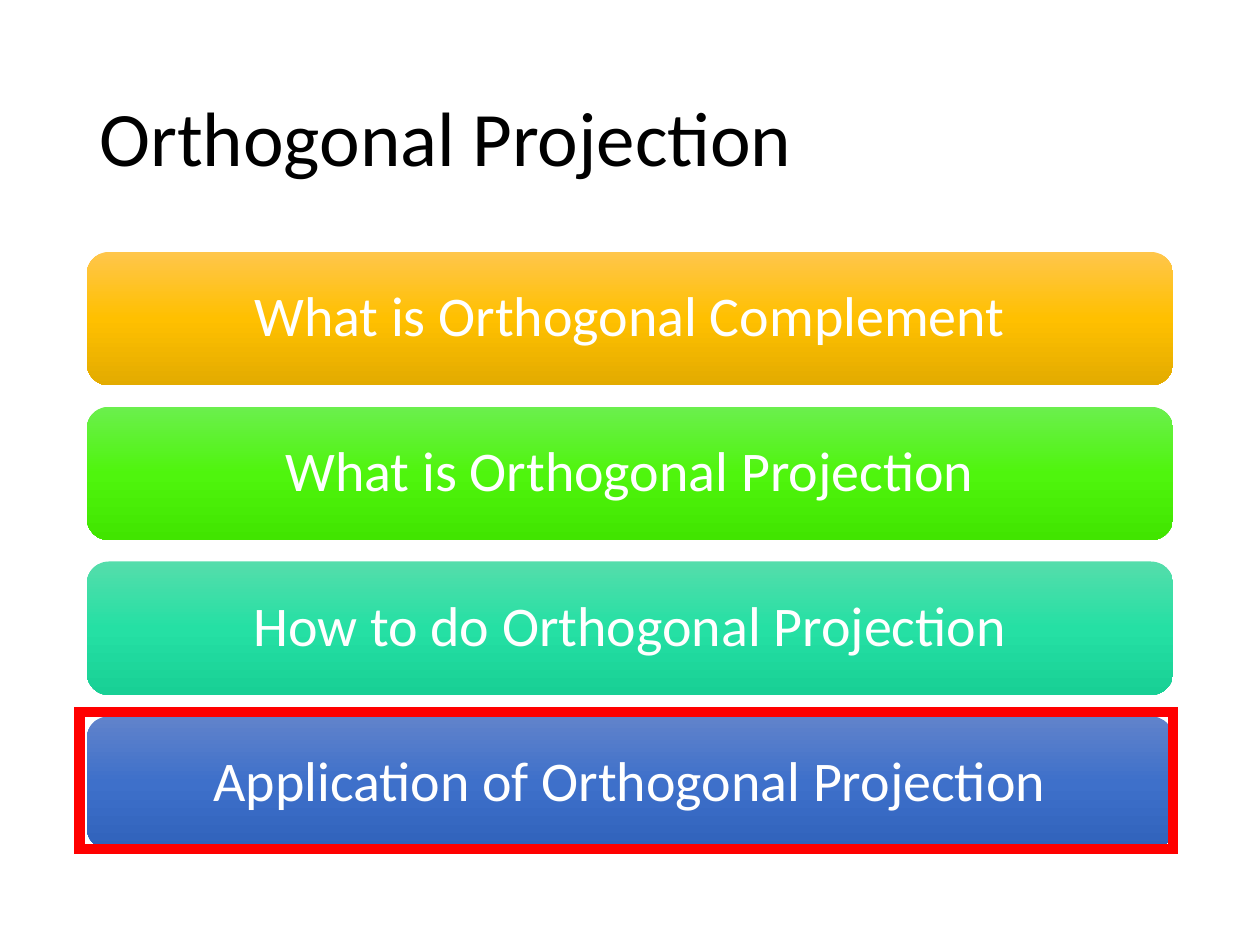
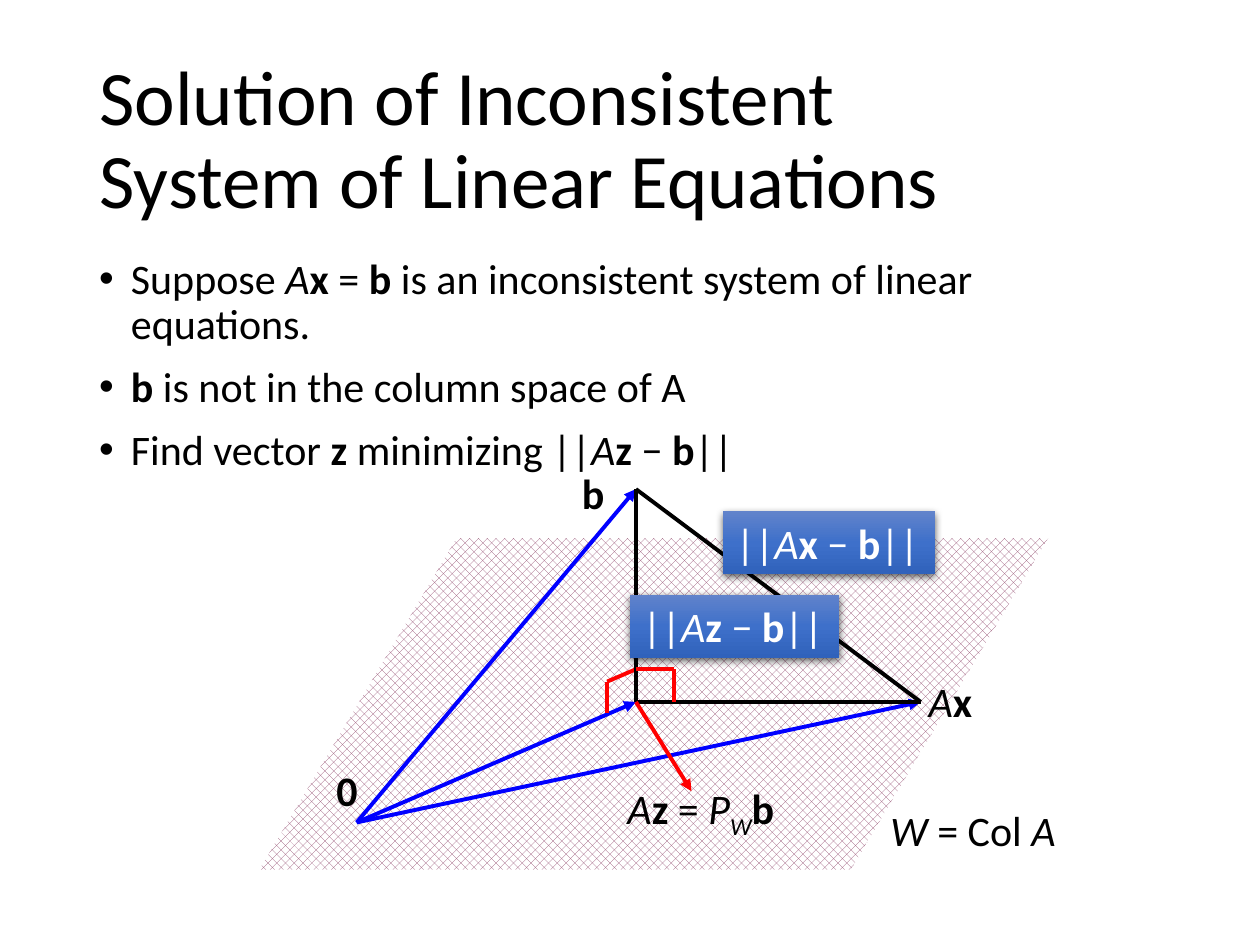
"""Build two slides on orthogonal projection and its use for inconsistent linear systems."""
from copy import deepcopy
from dataclasses import dataclass
from typing import NamedTuple, Optional

from lxml.etree import SubElement
from pptx import Presentation
from pptx.dml.color import RGBColor as Rgb
from pptx.enum.dml import MSO_PATTERN as Pattern
from pptx.enum.shapes import MSO_CONNECTOR as Connector, MSO_SHAPE as Preset
from pptx.enum.text import MSO_ANCHOR as Anchor, MSO_AUTO_SIZE as AutoSize, PP_ALIGN as Align
from pptx.oxml.ns import qn
from pptx.shapes.autoshape import Shape
from pptx.slide import Slide
from pptx.text.text import TextFrame
from pptx.util import Cm, Pt


@dataclass(frozen=True)
class Theme:
    font: str = "Calibri"
    title_size: int = 44
    bar_size: int = 32
    text_size: int = 24
    line_width: float = 2.25
    frame_width: float = 6
    tight_spacing: float = 0.9
    black: str = "000000"
    white: str = "FFFFFF"
    red: str = "FF0000"
    blue: str = "0000FF"
    plum: str = "954F72"
    gold_blend: tuple[str, ...] = ("FFC64B", "FFC000", "E3AB00")
    green_blend: tuple[str, ...] = ("6BEF4D", "4FF50D", "41E500")
    teal_blend: tuple[str, ...] = ("55DDAB", "25E0A4", "18D095")
    blue_blend: tuple[str, ...] = ("6183CB", "3E70CA", "3062BB")


THEME = Theme()


class Box(NamedTuple):
    left: float
    top: float
    width: float
    height: float

    def lengths(self) -> list[Cm]:
        return [Cm(value) for value in self]


class Point(NamedTuple):
    x: float
    y: float


class Bar(NamedTuple):
    text: str
    blend: tuple[str, ...]


class Segment(NamedTuple):
    start: Point
    end: Point
    color: str
    arrow: bool = False


class Label(NamedTuple):
    text: str
    box: Box
    wrap: bool = False
    blend: Optional[tuple[str, ...]] = None


TITLE_BOX = Box(1.75, 1.02, 21.9, 3.68)
BODY_BOX = Box(1.75, 5.08, 21.9, 12.09)
BAR_HEIGHT = 2.69
BAR_PITCH = 3.12
BAR_MARGIN = 0.33
HIGHLIGHT_BOX = Box(1.6, 14.35, 22.05, 2.77)
BARS = [
    Bar("What is Orthogonal Complement", THEME.gold_blend),
    Bar("What is Orthogonal Projection", THEME.green_blend),
    Bar("How to do Orthogonal Projection", THEME.teal_blend),
    Bar("Application of Orthogonal Projection", THEME.blue_blend),
]

BULLET_TEXT = "\n".join([
    "Suppose /A/*x *= *b* is an inconsistent system of linear equations.",
    "*b* is not in the column space of A",
    "Find vector *z* minimizing ||/A/*z *− *b*||",
])

PLANE_BOX = Box(5.23, 10.85, 15.9, 6.68)
PLANE_SLANT = 0.595
ORIGIN = Point(7.19, 16.58)
B_TIP = Point(12.82, 9.86)
FOOT = Point(12.82, 14.15)
AX_TIP = Point(18.56, 14.15)
LEFT_MARK = Point(12.24, 13.74)
TOP_MARK = Point(12.82, 13.49)
RIGHT_MARK = Point(13.59, 13.49)
SEGMENTS = [
    Segment(ORIGIN, FOOT, THEME.blue, arrow=True),
    Segment(AX_TIP, B_TIP, THEME.black),
    Segment(ORIGIN, B_TIP, THEME.blue, arrow=True),
    Segment(ORIGIN, AX_TIP, THEME.blue, arrow=True),
    Segment(LEFT_MARK, TOP_MARK, THEME.red),
    Segment(LEFT_MARK, Point(LEFT_MARK.x, 14.38), THEME.red),
    Segment(FOOT, AX_TIP, THEME.black),
    Segment(B_TIP, FOOT, THEME.black),
    Segment(TOP_MARK, RIGHT_MARK, THEME.red),
    Segment(RIGHT_MARK, Point(RIGHT_MARK.x, FOOT.y), THEME.red),
    Segment(FOOT, Point(13.94, 15.95), THEME.red, arrow=True),
]
LABELS = [
    Label("*0*", Box(6.53, 15.29, 1.09, 1.27), wrap=True),
    Label("*b*", Box(11.48, 9.3, 0.97, 1.27)),
    Label("||/A/*z *− *b*||", Box(12.7, 11.99, 4.22, 1.27), blend=THEME.blue_blend),
    Label("||/A/*x *− *b*||", Box(14.58, 10.31, 4.27, 1.27), blend=THEME.blue_blend),
    Label("/A/*x*", Box(18.47, 13.49, 1.4, 1.27)),
    Label("/W/ = Col /A/", Box(17.7, 16.1, 4.6, 1.3), wrap=True),
    Label("/A/*z *= /P~W~/*b*", Box(12.4, 15.65, 3.56, 1.27)),
]


def split_runs(text: str) -> list[tuple[str, frozenset[str]]]:
    """Split text into runs, where * is bold, / is italic and ~ is subscript."""
    runs, styles, piece = [], frozenset(), ""
    for character in text:
        if character in "*/~":
            if piece:
                runs.append((piece, styles))
            styles, piece = styles ^ {character}, ""
        else:
            piece += character
    return runs + [(piece, styles)] if piece else runs


def write_text(frame: TextFrame, text: str, *, size: int = THEME.text_size,
               color: str = THEME.black, align: Align = Align.LEFT,
               anchor: Anchor = Anchor.TOP, spacing: float = 1.0, wrap: bool = True,
               grow: bool = False, margin: Optional[float] = None,
               bullets: bool = False) -> None:
    """Fill a text frame with marked-up paragraphs in one format."""
    frame.word_wrap = wrap
    frame.auto_size = AutoSize.SHAPE_TO_FIT_TEXT if grow else AutoSize.NONE
    frame.vertical_anchor = anchor
    if margin is not None:
        frame.margin_left = frame.margin_right = Cm(margin)
        frame.margin_top = frame.margin_bottom = Cm(margin)
    for index, line in enumerate(text.split("\n")):
        paragraph = frame.add_paragraph() if index else frame.paragraphs[0]
        paragraph.alignment = align
        paragraph.line_spacing = spacing
        if bullets:
            paragraph.space_before = Pt(10)
            properties = paragraph._p.get_or_add_pPr()
            properties.set("marL", str(Cm(0.64)))
            properties.set("indent", str(-Cm(0.64)))
            SubElement(properties, qn("a:buFont"), typeface="Arial")
            SubElement(properties, qn("a:buChar"), char="•")
        for part_index, part in enumerate(line.split("\v")):
            if part_index:
                paragraph.add_line_break()
            for piece, styles in split_runs(part):
                run = paragraph.add_run()
                run.text = piece
                run.font.name = THEME.font
                run.font.size = Pt(size)
                run.font.color.rgb = Rgb.from_string(color)
                run.font.bold = "*" in styles
                run.font.italic = "/" in styles
                if "~" in styles:
                    run.font._element.set("baseline", "-25000")


def add_titled_slide(presentation: Presentation, title: str) -> Slide:
    """Add a title-only slide with its formatted title."""
    slide = presentation.slides.add_slide(presentation.slide_layouts[5])
    shape = slide.shapes.title
    shape.left, shape.top, shape.width, shape.height = TITLE_BOX.lengths()
    write_text(shape.text_frame, title, size=THEME.title_size,
               anchor=Anchor.MIDDLE, spacing=THEME.tight_spacing)
    return slide


def add_plain_shape(slide: Slide, preset: Preset, box: Box) -> Shape:
    """Add a preset shape without shadow, fill or outline."""
    shape = slide.shapes.add_shape(preset, *box.lengths())
    shape.shadow.inherit = False
    shape.fill.background()
    shape.line.fill.background()
    return shape


def fill_blend(shape: Shape, blend: tuple[str, ...]) -> None:
    """Fill a shape with an evenly stepped gradient from top to bottom."""
    shape.fill.gradient()
    shape.fill.gradient_angle = 270
    stop_list = shape._element.spPr.find(".//" + qn("a:gsLst"))
    while len(stop_list) < len(blend):
        stop_list.append(deepcopy(stop_list[0]))
    for index, (stop, color) in enumerate(zip(shape.fill.gradient_stops, blend)):
        stop.position = index / (len(blend) - 1)
        stop.color.rgb = Rgb.from_string(color)


def add_drop_shadow(shape: Shape) -> None:
    """Give a shape a soft black shadow below it."""
    effects = shape._element.spPr.find(qn("a:effectLst"))
    shadow = SubElement(effects, qn("a:outerShdw"), blurRad=str(Pt(4.5)), dist=str(Pt(1.5)),
                        dir="5400000", algn="ctr", rotWithShape="0")
    color = SubElement(shadow, qn("a:srgbClr"), val=THEME.black)
    SubElement(color, qn("a:alpha"), val="63000")


def add_bar(slide: Slide, bar: Bar, index: int) -> None:
    """Add one agenda bar at its place in the stack."""
    box = Box(BODY_BOX.left, BODY_BOX.top + index * BAR_PITCH, BODY_BOX.width, BAR_HEIGHT)
    shape = add_plain_shape(slide, Preset.ROUNDED_RECTANGLE, box)
    fill_blend(shape, bar.blend)
    write_text(shape.text_frame, bar.text, size=THEME.bar_size, color=THEME.white,
               align=Align.CENTER, anchor=Anchor.MIDDLE, spacing=THEME.tight_spacing,
               margin=BAR_MARGIN)


def add_segment(slide: Slide, segment: Segment) -> None:
    """Draw a straight line, with an arrowhead if it is a vector."""
    ends = [Cm(value) for value in (*segment.start, *segment.end)]
    connector = slide.shapes.add_connector(Connector.STRAIGHT, *ends)
    connector.line.color.rgb = Rgb.from_string(segment.color)
    connector.line.width = Pt(THEME.line_width)
    if segment.arrow:
        SubElement(connector.line._get_or_add_ln(), qn("a:tailEnd"), type="triangle")
    SubElement(connector._element.spPr, qn("a:effectLst"))


def add_label(slide: Slide, label: Label) -> None:
    """Add a diagram label, on a shaded box if it has a blend."""
    if label.blend:
        shape = add_plain_shape(slide, Preset.RECTANGLE, label.box)
        fill_blend(shape, label.blend)
        add_drop_shadow(shape)
    else:
        shape = slide.shapes.add_textbox(*label.box.lengths())
    write_text(shape.text_frame, label.text, wrap=label.wrap, grow=True,
               color=THEME.white if label.blend else THEME.black)


def build_agenda(presentation: Presentation) -> None:
    """Build the agenda with its last topic highlighted."""
    slide = add_titled_slide(presentation, "Orthogonal Projection")
    for index, bar in enumerate(BARS):
        add_bar(slide, bar, index)
    highlight = add_plain_shape(slide, Preset.RECTANGLE, HIGHLIGHT_BOX)
    highlight.line.color.rgb = Rgb.from_string(THEME.red)
    highlight.line.width = Pt(THEME.frame_width)
    SubElement(highlight.line._get_or_add_ln(), qn("a:miter"), lim="800000")


def build_inconsistent_system(presentation: Presentation) -> None:
    """Build the problem statement and its projection diagram."""
    slide = add_titled_slide(
        presentation, "Solution of Inconsistent \vSystem of Linear Equations")
    body = slide.shapes.add_textbox(*BODY_BOX.lengths())
    write_text(body.text_frame, BULLET_TEXT, spacing=THEME.tight_spacing, bullets=True)
    plane = add_plain_shape(slide, Preset.PARALLELOGRAM, PLANE_BOX)
    plane.adjustments[0] = PLANE_SLANT
    plane.fill.patterned()
    plane.fill.pattern = Pattern.PERCENT_50
    plane.fill.fore_color.rgb = Rgb.from_string(THEME.plum)
    plane.fill.back_color.rgb = Rgb.from_string(THEME.white)
    for segment in SEGMENTS:
        add_segment(slide, segment)
    for label in LABELS:
        add_label(slide, label)


def main() -> None:
    """Build and save the presentation."""
    presentation = Presentation()
    presentation.slide_width, presentation.slide_height = Cm(25.4), Cm(19.05)
    build_agenda(presentation)
    build_inconsistent_system(presentation)
    presentation.save("out.pptx")


if __name__ == "__main__":
    main()
